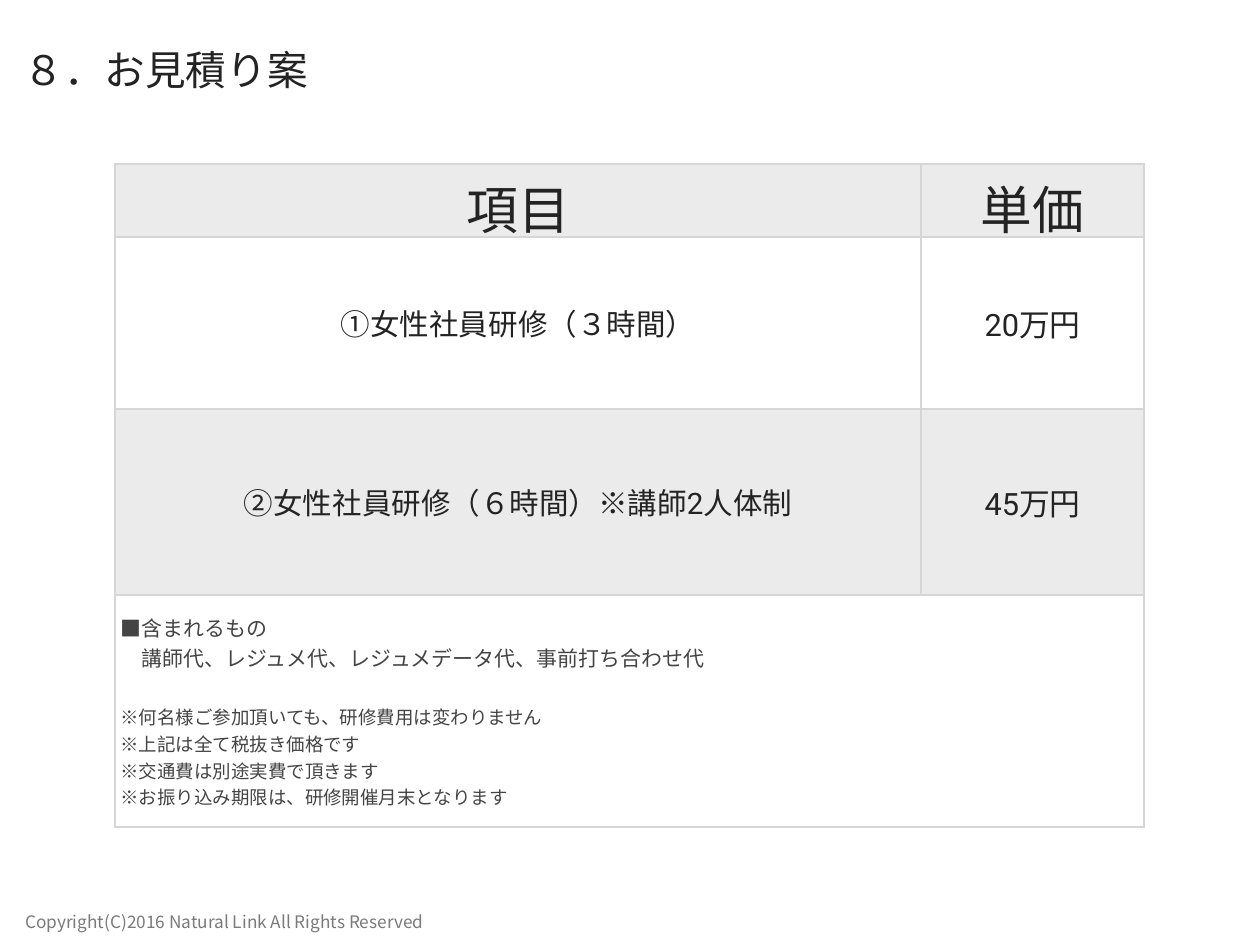
from lxml.etree import SubElement
from pptx import Presentation
from pptx.dml.color import RGBColor
from pptx.enum.text import MSO_ANCHOR, MSO_AUTO_SIZE, PP_ALIGN
from pptx.oxml.ns import qn
from pptx.util import Pt

INK = RGBColor(0x23, 0x23, 0x23)
NOTE_INK = RGBColor(0x44, 0x44, 0x44)
FOOTER_INK = RGBColor(0x7A, 0x7A, 0x7A)
BAND = RGBColor(0xEB, 0xEB, 0xEB)
BORDER = RGBColor(0xD6, 0xD6, 0xD6)
MAIN_FONT = "Roboto"
FOOTER_FONT = "Noto Sans CJK JP"
INSET = Pt(4.5)

COLUMN_WIDTHS = (655, 181.5)
ROW_HEIGHTS = (44, 140, 151, 189)
PRICE_ROWS = (
    (("項目", 42), ("単価", 42)),
    (("①女性社員研修（３時間）", 24), ("20万円", 25)),
    (("②女性社員研修（６時間）※講師2人体制", 24), ("45万円", 25)),
)
# text, size, indent, space before
NOTES = (
    ("■含まれるもの", 17, 0, 0),
    ("講師代、レジュメ代、レジュメデータ代、事前打ち合わせ代", 17, 17, 0),
    ("※何名様ご参加頂いても、研修費用は変わりません", 15, 0, 25),
    ("※上記は全て税抜き価格です", 15, 0, 0),
    ("※交通費は別途実費で頂きます", 15, 0, 0),
    ("※お振り込み期限は、研修開催月末となります", 15, 0, 0),
)


def add_span(para, text, size, color, font=MAIN_FONT):
    """Add one formatted run to a paragraph."""
    span = para.add_run()
    span.text = text
    span.font.name = font
    span.font.size = Pt(size)
    span.font.color.rgb = color


def set_insets(holder):
    """Give a text frame or a cell equal insets on all sides."""
    holder.margin_left = holder.margin_right = INSET
    holder.margin_top = holder.margin_bottom = INSET


def add_label(page, left, top, width, height, text, size, color, font):
    """Add a one-line text box."""
    box = page.shapes.add_textbox(Pt(left), Pt(top), Pt(width), Pt(height))
    frame = box.text_frame
    frame.word_wrap = True
    frame.auto_size = MSO_AUTO_SIZE.SHAPE_TO_FIT_TEXT
    frame.vertical_anchor = MSO_ANCHOR.MIDDLE
    set_insets(frame)
    add_span(frame.paragraphs[0], text, size, color, font)


def style_cell(cell, banded):
    """Set the borders, fill, insets and anchor of a cell."""
    properties = cell._tc.get_or_add_tcPr()
    for side in ("a:lnL", "a:lnR", "a:lnT", "a:lnB"):
        line = SubElement(properties, qn(side), w=str(Pt(2)))
        fill = SubElement(line, qn("a:solidFill"))
        SubElement(fill, qn("a:srgbClr"), val=str(BORDER))
    if banded:
        cell.fill.solid()
        cell.fill.fore_color.rgb = BAND
    else:
        cell.fill.background()
    set_insets(cell)
    cell.vertical_anchor = MSO_ANCHOR.MIDDLE


def fill_notes(cell):
    """Write the notes on the estimate into a cell."""
    frame = cell.text_frame
    for index, (text, size, indent, gap) in enumerate(NOTES):
        para = frame.add_paragraph() if index else frame.paragraphs[0]
        if indent:
            para._p.get_or_add_pPr().set("marL", str(Pt(indent)))
        if gap:
            para.space_before = Pt(gap)
        add_span(para, text, size, NOTE_INK)


def add_estimate(page):
    """Add the price table with its row of notes."""
    table = page.shapes.add_table(
        len(ROW_HEIGHTS), len(COLUMN_WIDTHS), Pt(93.5), Pt(133),
        Pt(sum(COLUMN_WIDTHS)), Pt(sum(ROW_HEIGHTS))).table
    table.first_row = table.horz_banding = False
    for column, width in zip(table.columns, COLUMN_WIDTHS):
        column.width = Pt(width)
    for index, (row, height) in enumerate(zip(table.rows, ROW_HEIGHTS)):
        row.height = Pt(height)
        for cell in row.cells:
            style_cell(cell, banded=index in (0, 2))
    for row, entries in zip(table.rows, PRICE_ROWS):
        for cell, (text, size) in zip(row.cells, entries):
            para = cell.text_frame.paragraphs[0]
            para.alignment = PP_ALIGN.CENTER
            add_span(para, text, size, INK)
    notes_cell = table.cell(3, 0)
    notes_cell.merge(table.cell(3, 1))
    fill_notes(notes_cell)


def main():
    """Build the estimate slide and save it."""
    deck = Presentation()
    deck.slide_width, deck.slide_height = Pt(1024), Pt(768)
    page = deck.slides.add_slide(deck.slide_layouts[6])
    add_label(page, 14.5, 35.5, 746, 42, "８．お見積り案", 33, INK, MAIN_FONT)
    add_label(page, 16, 738, 545, 22,
              "Copyright(C)2016 Natural Link All Rights Reserved",
              14, FOOTER_INK, FOOTER_FONT)
    add_estimate(page)
    deck.save("out.pptx")


if __name__ == "__main__":
    main()
